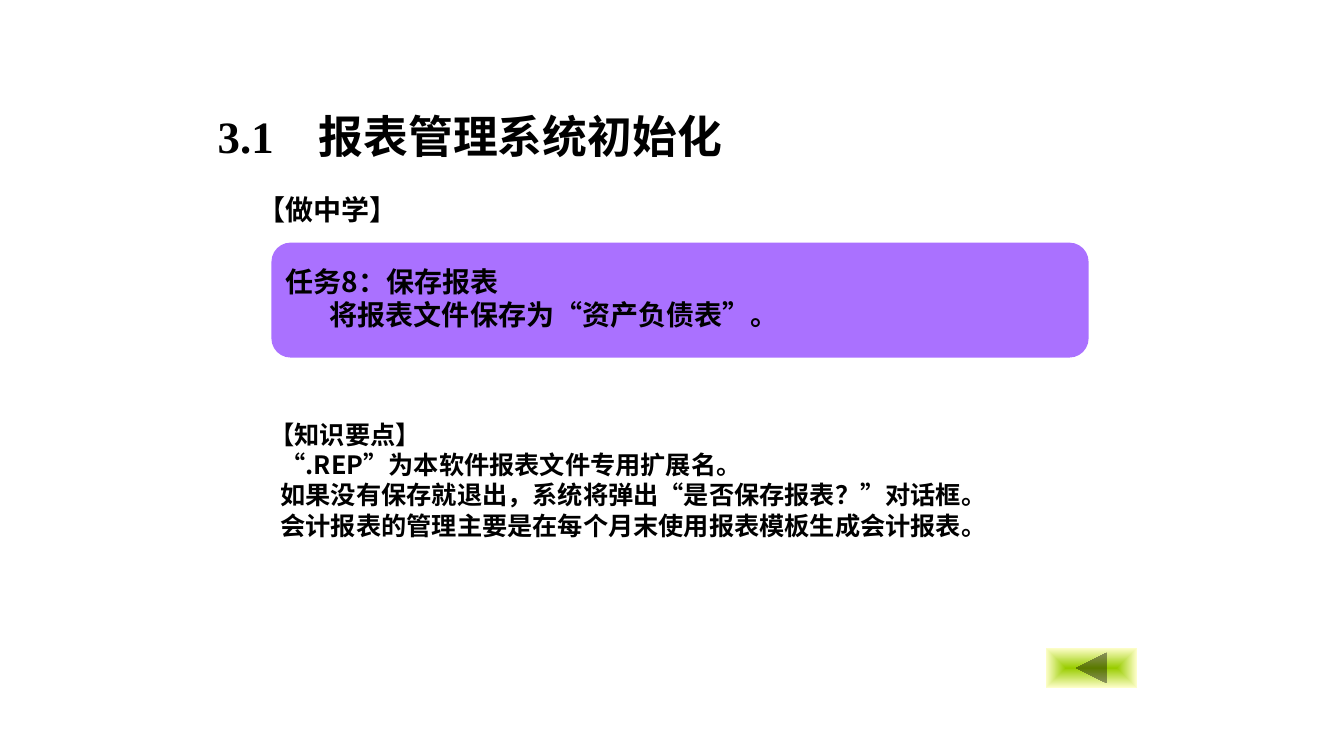
from lxml import etree
from pptx import Presentation
from pptx.dml.color import RGBColor
from pptx.enum.shapes import MSO_SHAPE
from pptx.enum.text import MSO_ANCHOR, PP_ALIGN
from pptx.oxml.ns import qn
from pptx.util import Inches, Pt

ROUNDED = MSO_SHAPE.ROUNDED_RECTANGLE
BACK_BUTTON = MSO_SHAPE.ACTION_BUTTON_BACK_OR_PREVIOUS
TOP, MIDDLE = MSO_ANCHOR.TOP, MSO_ANCHOR.MIDDLE
LEFT = PP_ALIGN.LEFT

BLACK = RGBColor(0x00, 0x00, 0x00)
PURPLE = RGBColor(0xAA, 0x71, 0xFF)
GREEN = RGBColor(0x99, 0xCC, 0x00)
CREAM = RGBColor(0xFF, 0xFF, 0xCC)

SANS, SERIF = "Noto Sans CJK SC", "Times New Roman"
WIDTH, HEIGHT = Inches(13.33), Inches(7.5)

TITLE = "3.1\t报表管理系统初始化"
TASK = ["任务8：保存报表", "将报表文件保存为“资产负债表”。"]
KEY_POINTS = [
    "【知识要点】",
    "“.REP”为本软件报表文件专用扩展名。",
    "如果没有保存就退出，系统将弹出“是否保存报表？”对话框。",
    "会计报表的管理主要是在每个月末使用报表模板生成会计报表。",
]


def area(left, top, width, height):
    """Turn shares of the slide's size into lengths."""
    return (int(WIDTH * left), int(HEIGHT * top),
            int(WIDTH * width), int(HEIGHT * height))


def place(box, bounds):
    box.left, box.top, box.width, box.height = bounds


def write(box, lines, size, font=SANS, anchor=TOP, indent=0, wrap=True):
    """Fill a box with bold lines; all lines after the first are indented."""
    frame = box.text_frame
    frame.text = "\n".join(lines)
    frame.word_wrap = wrap
    frame.vertical_anchor = anchor
    for number, para in enumerate(frame.paragraphs):
        para.alignment = LEFT
        para.space_before = Pt(0)
        properties = para._p.get_or_add_pPr()
        properties.set("marL", str(Inches(indent if number else 0)))
        properties.set("indent", "0")
        etree.SubElement(properties, qn("a:buNone"))
        for span in para.runs:
            span.font.size = Pt(size)
            span.font.bold = True
            span.font.name = font
            span.font.color.rgb = BLACK
            east_asian = etree.SubElement(span._r.get_or_add_rPr(), qn("a:ea"))
            east_asian.set("typeface", SANS)


def add_tab_stop(para, position):
    tabs = etree.SubElement(para._p.get_or_add_pPr(), qn("a:tabLst"))
    etree.SubElement(tabs, qn("a:tab"), pos=str(Inches(position)), algn="l")


def add_plain_shape(page, kind, bounds):
    shape = page.shapes.add_shape(kind, *bounds)
    shape.shadow.inherit = False
    shape.line.fill.background()
    return shape


def fill_from_centre(shape, inner, outer):
    """Apply a rectangular gradient that spreads from the centre."""
    shape.fill.gradient()
    for stop, color in zip(shape.fill.gradient_stops, (inner, outer)):
        stop.color.rgb = color
    gradient = shape._element.spPr.find(qn("a:gradFill"))
    gradient.remove(gradient.find(qn("a:lin")))
    spread = etree.SubElement(gradient, qn("a:path"), path="rect")
    etree.SubElement(spread, qn("a:fillToRect"),
                     l="50000", t="50000", r="50000", b="50000")


def main():
    deck = Presentation()
    deck.slide_width, deck.slide_height = WIDTH, HEIGHT
    page = deck.slides.add_slide(deck.slide_layouts[1])
    title, key_points = page.placeholders

    place(title, area(0.1545, 0.137, 0.668, 0.085))
    write(title, [TITLE], 32, font=SERIF)
    add_tab_stop(title.text_frame.paragraphs[0], 0.87)

    place(key_points, area(0.193, 0.547, 0.596, 0.175))
    write(key_points, KEY_POINTS, 18, anchor=MIDDLE, indent=0.11)

    heading = page.shapes.add_textbox(*area(0.184, 0.248, 0.12, 0.059))
    write(heading, ["【做中学】"], 20, font=SERIF, anchor=MIDDLE, wrap=False)

    panel = add_plain_shape(page, ROUNDED, area(0.202, 0.321, 0.608, 0.152))
    panel.fill.solid()
    panel.fill.fore_color.rgb = PURPLE

    task = page.shapes.add_textbox(*area(0.205, 0.343, 0.593, 0.103))
    write(task, TASK, 20, indent=0.44)

    back = add_plain_shape(page, BACK_BUTTON, area(0.778, 0.857, 0.068, 0.053))
    fill_from_centre(back, GREEN, CREAM)

    deck.save("out.pptx")


if __name__ == "__main__":
    main()
